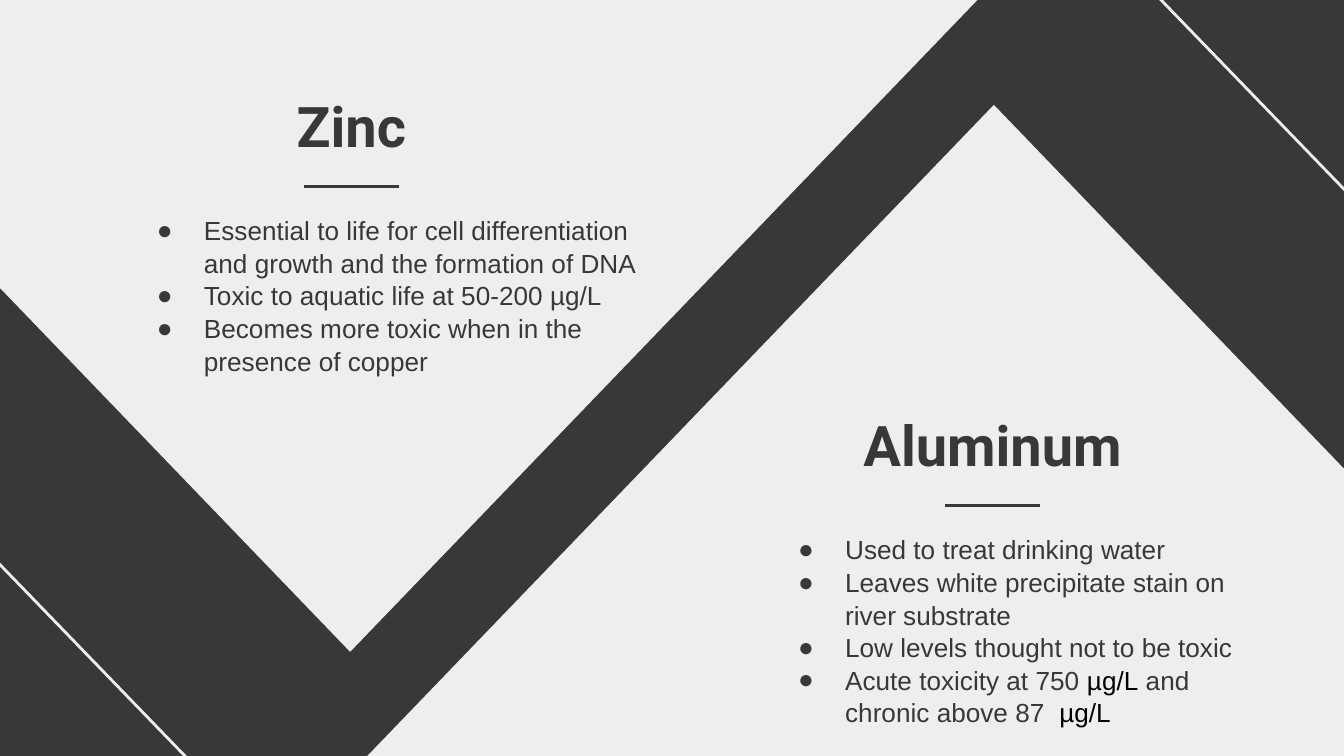
from dataclasses import dataclass

from lxml import etree
from pptx import Presentation
from pptx.dml.color import RGBColor
from pptx.enum.shapes import MSO_CONNECTOR as CONN, MSO_SHAPE as SHAPE
from pptx.enum.text import MSO_ANCHOR as ANCHOR, PP_ALIGN as ALIGN
from pptx.oxml.ns import qn
from pptx.util import Pt


@dataclass(frozen=True)
class Theme:
    dark: RGBColor = RGBColor(0x38, 0x38, 0x38)
    light: RGBColor = RGBColor(0xEE, 0xEE, 0xEE)
    black: RGBColor = RGBColor(0, 0, 0)
    title_font: str = "Roboto"
    body_font: str = "Arial"
    title_size: float = 30
    body_size: float = 14
    line_width: float = 1.5
    inset: float = 7.2
    body_spacing: float = 1.04


class SlideBuilder:
    def __init__(self, slide, theme):
        self.s, self.theme = slide, theme

    def background(self, color):
        fill = self.s.background.fill
        fill.solid()
        fill.fore_color.rgb = color

    def triangle(self, x, y, w, h, rotation=0):
        sp = self.s.shapes.add_shape(SHAPE.ISOSCELES_TRIANGLE, Pt(x), Pt(y), Pt(w), Pt(h))
        sp.shadow.inherit = False
        sp.rotation = rotation
        sp.fill.solid()
        sp.fill.fore_color.rgb = self.theme.light
        sp.line.fill.background()

    def line(self, x1, y1, x2, y2, color):
        cx = self.s.shapes.add_connector(CONN.STRAIGHT, Pt(x1), Pt(y1), Pt(x2), Pt(y2))
        cx.line.color.rgb = color
        cx.line.width = Pt(self.theme.line_width)
        etree.SubElement(cx._element.spPr, qn("a:effectLst"))

    def text_frame(self, x, y, w, h):
        tf = self.s.shapes.add_textbox(Pt(x), Pt(y), Pt(w), Pt(h)).text_frame
        tf.word_wrap = True
        tf.vertical_anchor = ANCHOR.TOP
        tf.margin_left = tf.margin_right = Pt(self.theme.inset)
        tf.margin_top = tf.margin_bottom = Pt(self.theme.inset)
        return tf

    def run(self, p, text, font, size, color, bold=False):
        r = p.add_run()
        r.text = text
        r.font.name, r.font.size, r.font.bold = font, Pt(size), bold
        r.font.color.rgb = color

    def title(self, text, x, y, w, h):
        t = self.theme
        p = self.text_frame(x, y, w, h).paragraphs[0]
        p.alignment = ALIGN.CENTER
        self.run(p, text, t.title_font, t.title_size, t.dark, bold=True)

    def bullets(self, items, x, y, w, h):
        """Each item is a list of (text, color) runs."""
        t = self.theme
        tf = self.text_frame(x, y, w, h)
        for i, runs in enumerate(items):
            p = tf.add_paragraph() if i else tf.paragraphs[0]
            p.alignment = ALIGN.LEFT
            p.line_spacing = t.body_spacing
            self.bullet_mark(p)
            for text, color in runs:
                self.run(p, text, t.body_font, t.body_size, color)

    def bullet_mark(self, p):
        pPr = p._p.get_or_add_pPr()
        pPr.set("marL", str(Pt(36)))
        pPr.set("indent", str(Pt(-25.2)))
        clr = etree.SubElement(pPr, qn("a:buClr"))
        etree.SubElement(clr, qn("a:srgbClr"), val=str(self.theme.dark))
        etree.SubElement(pPr, qn("a:buFont"), typeface=self.theme.body_font)
        etree.SubElement(pPr, qn("a:buChar"), char="●")


def main():
    prs = Presentation()
    prs.slide_width, prs.slide_height = Pt(720), Pt(405)
    theme = Theme()
    b = SlideBuilder(prs.slides.add_slide(prs.slide_layouts[6]), theme)
    dark, black = theme.dark, theme.black

    # Dark zigzag left between two light triangles
    b.background(dark)
    b.triangle(190.8, 56.2, 683.3, 355)
    b.triangle(-154.1, -5.8, 683.3, 355, rotation=180)

    # Thin diagonals in opposite corners
    for x, y in ((-108, 190.8), (617.2, -5)):
        b.line(x, y, x + 242.3, y + 250.6, theme.light)

    # Metals: title, short rule below its centre, bullets
    zinc = [
        [("Essential to life for cell differentiation and growth and the formation of DNA", dark)],
        [("Toxic to aquatic life at 50-200 µg/L", dark)],
        [("Becomes more toxic when in the presence of copper", dark)],
    ]
    aluminum = [
        [("Used to treat drinking water", dark)],
        [("Leaves white precipitate stain on river substrate", dark)],
        [("Low levels thought not to be toxic", dark)],
        [("Acute toxicity at 750 ", dark), ("µg/L", black),
         (" and chronic above 87  ", dark), ("µg/L", black)],
    ]
    title_w, rule_w = 244.1, 51.1
    for name, items, x, y, body_w in (("Zinc", zinc, 66.2, 41.8, 283),
                                      ("Aluminum", aluminum, 409.7, 212.8, 262.1)):
        rule_x = x + (title_w - rule_w) / 2
        b.title(name, x, y, title_w, 41.8)
        b.line(rule_x, y + 58.1, rule_x + rule_w, y + 58.1, dark)
        b.bullets(items, x, y + 65.3, body_w, 77.8)

    prs.save("out.pptx")


if __name__ == "__main__":
    main()
